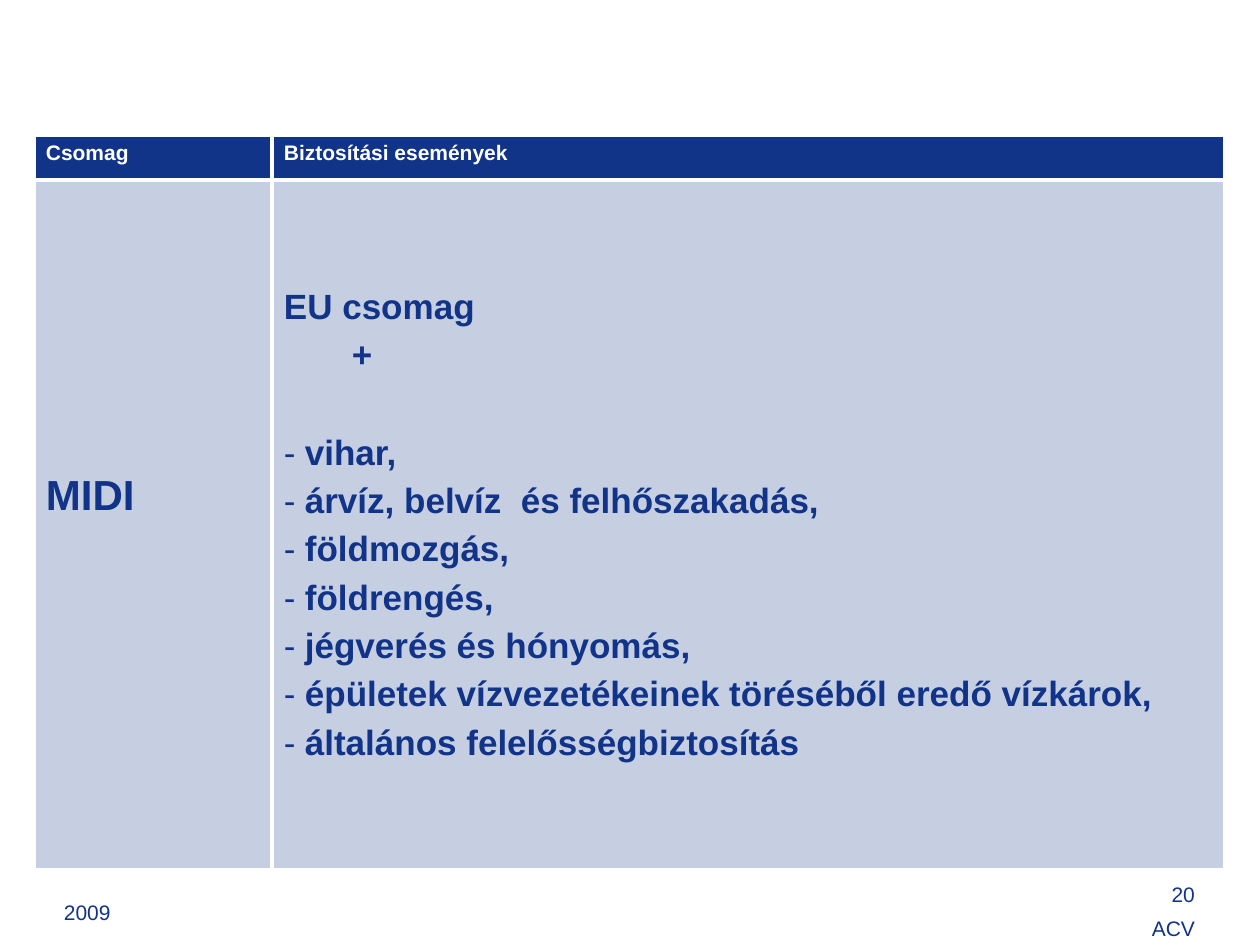
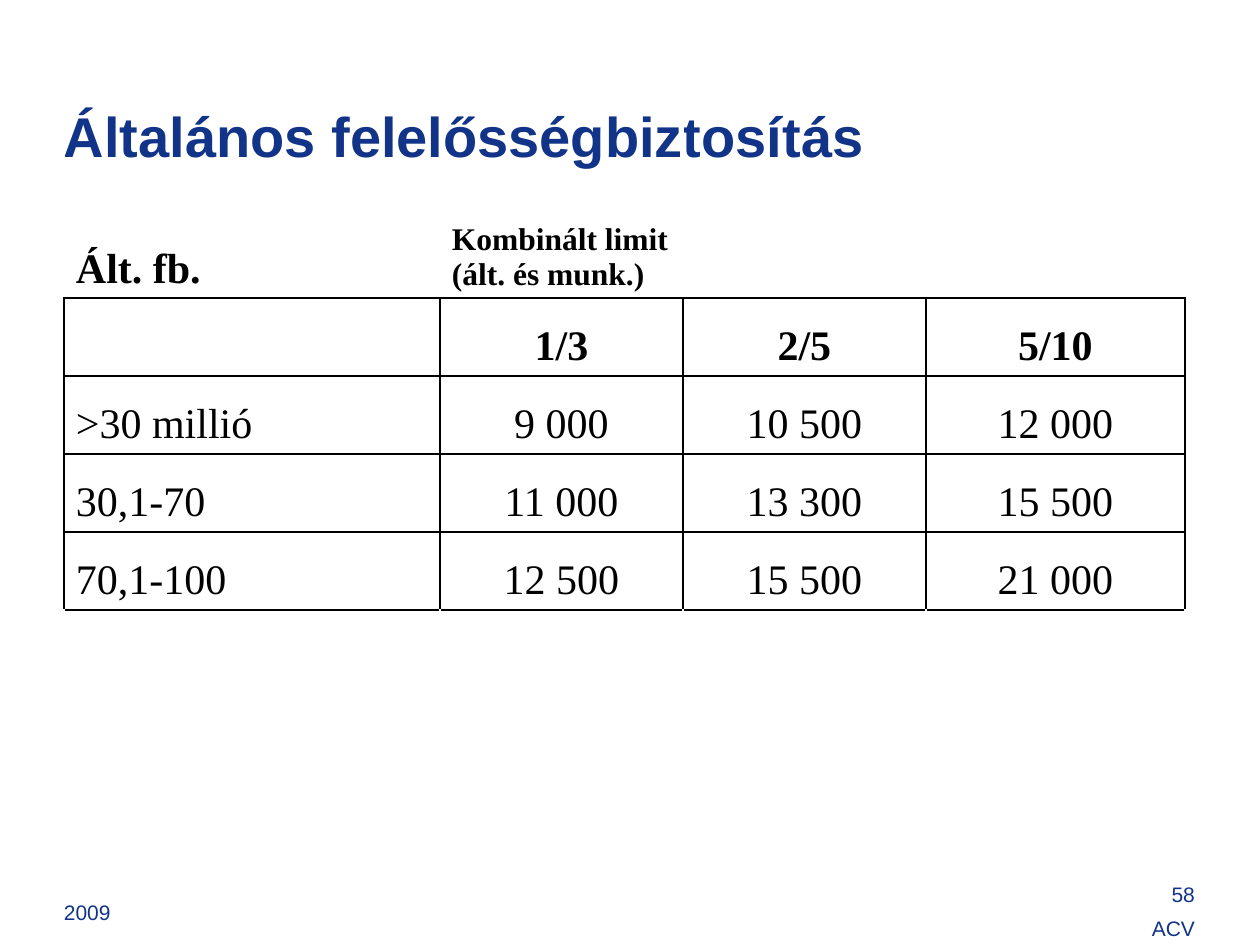
from lxml import etree
from pptx import Presentation
from pptx.dml.color import RGBColor
from pptx.enum.text import MSO_ANCHOR, PP_ALIGN
from pptx.oxml.ns import qn
from pptx.util import Emu, Pt

TOP, MIDDLE, BOTTOM = MSO_ANCHOR.TOP, MSO_ANCHOR.MIDDLE, MSO_ANCHOR.BOTTOM
LEFT, CENTER, RIGHT = PP_ALIGN.LEFT, PP_ALIGN.CENTER, PP_ALIGN.RIGHT
PX = 914400 / 126
C = {"blue": "113388", "pale": "C6CEE2", "white": "FFFFFF", "black": "000000"}

BASE = {"name": "Arial", "size": Pt(12), "bold": False}
BOLD = {**BASE, "bold": True}
SERIF = {"name": "Times New Roman", "size": Pt(24), "bold": False}


def write(p, text, fmt, color, align=LEFT):
    p.alignment = align
    r = p.add_run()
    r.text = text
    for key, value in fmt.items():
        setattr(r.font, key, value)
    r.font.color.rgb = RGBColor.from_string(C[color])


def add_grid(slide, left, top, cols, rows, border, width):
    """Add a plain table; border gives the L, R, T, B colours of a row."""
    box = [Emu(round(v * PX)) for v in (left, top, sum(cols), sum(rows))]
    table = slide.shapes.add_table(len(rows), len(cols), *box).table
    table.first_row = table.horz_banding = False
    for col, w in zip(table.columns, cols):
        col.width = Emu(round(w * PX))
    for i, (row, h) in enumerate(zip(table.rows, rows)):
        row.height = Emu(round(h * PX))
        for cell in row.cells:
            tcPr = cell._tc.get_or_add_tcPr()
            for side, color in zip("LRTB", border(i)):
                ln = etree.SubElement(tcPr, qn(f"a:ln{side}"), w=str(Pt(width)))
                fill = etree.SubElement(ln, qn("a:solidFill"))
                etree.SubElement(fill, qn("a:srgbClr"), val=C[color])
            cell.fill.background()
            cell.margin_left = cell.margin_right = Emu(round(12 * PX))
            cell.margin_top = cell.margin_bottom = Emu(round(6 * PX))
    return table


prs = Presentation()
prs.slide_width, prs.slide_height = Emu(round(1260 * PX)), Emu(round(945 * PX))
package_slide = prs.slides.add_slide(prs.slide_layouts[6])
liability_slide = prs.slides.add_slide(prs.slide_layouts[5])

# Footers: year on the left, page number and author on the right
for slide, number in ((package_slide, "20"), (liability_slide, "58")):
    for left, inset, align, lines in ((64, 35, LEFT, ["2009"]),
                                      (903, 13, RIGHT, [number, "ACV"])):
        sp = slide.shapes.add_textbox(*[Emu(round(v * PX)) for v in (left, 869, 292, 76)])
        tf = sp.text_frame
        tf.word_wrap = True
        tf.margin_left = tf.margin_right = tf.margin_bottom = 0
        tf.margin_top = Emu(round(inset * PX))
        for i, line in enumerate(lines):
            p = tf.add_paragraph() if i else tf.paragraphs[0]
            p.space_after = Pt(4.5)
            write(p, line, BASE, "blue", align)

# Slide 1: package table
table = add_grid(package_slide, 34, 135, [238, 953], [45, 690],
                 lambda i: ["white"] * 4, 2.25)
for i, color in enumerate(("blue", "pale")):
    for cell in table.rows[i].cells:
        cell.fill.solid()
        cell.fill.fore_color.rgb = RGBColor.from_string(C[color])
        cell.vertical_anchor = MIDDLE if i else TOP
for cell, text in zip(table.rows[0].cells, ("Csomag", "Biztosítási események")):
    write(cell.text_frame.paragraphs[0], text, BOLD, "white")

name_cell, events_cell = table.rows[1].cells
name_cell.margin_bottom = Emu(round(64 * PX))
write(name_cell.text_frame.paragraphs[0], "MIDI", {**BOLD, "size": Pt(24)}, "blue")

# Insured events: intro lines, then a dashed list
events = ["vihar,", "árvíz, belvíz  és felhőszakadás,", "földmozgás,", "földrengés,",
          "jégverés és hónyomás,", "épületek vízvezetékeinek töréséből eredő vízkárok,",
          "általános felelősségbiztosítás"]
tf = events_cell.text_frame
for i, text in enumerate(["EU csomag", "+"] + events):
    p = tf.add_paragraph() if i else tf.paragraphs[0]
    pPr = p._p.get_or_add_pPr()
    if i == 1:
        pPr.set("marL", str(round(68 * PX)))
    if i > 1:
        pPr.set("marL", str(round(21 * PX)))
        pPr.set("indent", str(round(-21 * PX)))
        buClr = etree.SubElement(pPr, qn("a:buClr"))
        etree.SubElement(buClr, qn("a:srgbClr"), val=C["blue"])
        etree.SubElement(pPr, qn("a:buFont"), typeface="Arial")
        etree.SubElement(pPr, qn("a:buChar"), char="-")
    if i == 2:
        p.space_before = Pt(28.3)
    p.space_after = Pt(5.3)
    write(p, text, {**BOLD, "size": Pt(20)}, "blue")

# Slide 2: title
title = liability_slide.shapes.title
title.left, title.top, title.width, title.height = [
    Emu(round(v * PX)) for v in (64, 96, 863, 94)]
tf = title.text_frame
tf.vertical_anchor = TOP
tf.margin_left = tf.margin_right = tf.margin_bottom = 0
tf.margin_top = Emu(round(5 * PX))
write(tf.paragraphs[0], "Általános felelősségbiztosítás", {**BOLD, "size": Pt(32)}, "blue")

# Slide 2: premium table, ruled only between its first and last rows
premiums = [["Ált. fb.", "Kombinált limit (ált. és munk.)", "", ""],
            ["", "1/3", "2/5", "5/10"],
            [">30 millió", "9 000", "10 500", "12 000"],
            ["30,1-70", "11 000", "13 300", "15 500"],
            ["70,1-100", "12 500", "15 500", "21 000"]]
outer = {0: ["white", "white", "white", "black"],
         5: ["white", "white", "black", "white"]}
table = add_grid(liability_slide, 64, 26, [376, 243, 243, 259], [272] + [78] * 5,
                 lambda i: outer.get(i, ["black"] * 4), 1)
for i, values in enumerate(premiums):
    for j, text in enumerate(values):
        if text:
            cell = table.cell(i, j)
            cell.vertical_anchor = BOTTOM
            size = Pt(18) if (i, j) == (0, 1) else Pt(24)
            write(cell.text_frame.paragraphs[0], text,
                  {**SERIF, "size": size, "bold": i < 2}, "black",
                  CENTER if i and j else LEFT)

prs.save("out.pptx")
